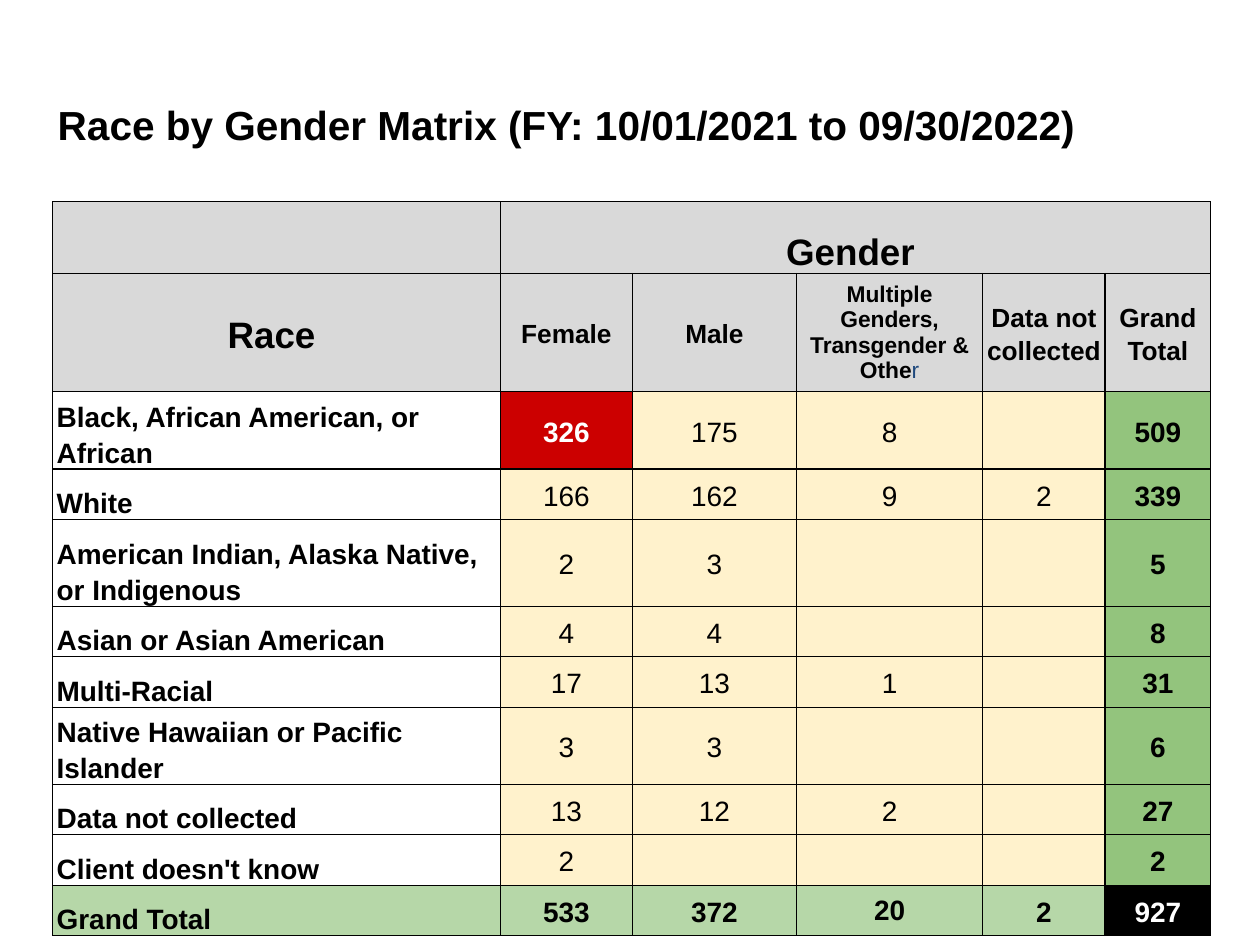
from lxml import etree
from pptx import Presentation
from pptx.dml.color import RGBColor
from pptx.enum.text import MSO_ANCHOR as Anchor, PP_ALIGN as Align
from pptx.oxml.ns import qn
from pptx.util import Inches, Pt

COLUMN_WIDTHS = [3.55, 1.05, 1.3, 1.48, 0.97, 0.84]
ROW_HEIGHTS = [0.57, 0.94, 0.57, 0.4, 0.69, 0.4, 0.4, 0.57, 0.4, 0.4, 0.4]
ROWS = [
    ["", "Gender ", "", "", "", ""],
    ["Race ", "Female", "Male", "Multiple Genders, Transgender & Othe",
     "Data not collected", "Grand Total"],
    ["Black, African American, or African", "326", "175", "8", "", "509"],
    ["White", "166", "162", "9", "2", "339"],
    ["American Indian, Alaska Native, or Indigenous", "2", "3", "", "", "5"],
    ["Asian or Asian American", "4", "4", "", "", "8"],
    ["Multi-Racial", "17", "13", "1", "", "31"],
    ["Native Hawaiian or Pacific Islander", "3", "3", "", "", "6"],
    ["Data not collected", "13", "12", "2", "", "27"],
    ["Client doesn't know", "2", "", "", "", "2"],
    ["Grand Total", "533", "372", "20", "2", "927"],
]
LAST_ROW, LAST_COLUMN = len(ROWS) - 1, len(COLUMN_WIDTHS) - 1
HIGHLIGHT, OVERALL = (2, 1), (LAST_ROW, LAST_COLUMN)
GENDER_MIX, MIX_TOTAL = (1, 3), (LAST_ROW, 3)


def color(value):
    return RGBColor.from_string(value)


def format_run(span, size, bold=True, tint="000000"):
    span.font.name = "Arial"
    span.font.size = Pt(size)
    span.font.bold = bold
    span.font.color.rgb = color(tint)


def add_borders(cell):
    properties = cell._tc.get_or_add_tcPr()
    for side in ("lnL", "lnR", "lnT", "lnB"):
        line = etree.SubElement(properties, qn(f"a:{side}"), w=str(Pt(0.75)))
        fill = etree.SubElement(line, qn("a:solidFill"))
        etree.SubElement(fill, qn("a:srgbClr"), val="000000")


def cell_fill(row, column):
    if (row, column) == HIGHLIGHT:
        return "CC0000"
    if (row, column) == OVERALL:
        return "000000"
    if row < 2:
        return "D9D9D9"
    if row == LAST_ROW:
        return "B6D7A8"
    if column == LAST_COLUMN:
        return "93C47D"
    return "FFF2CC" if column else "FFFFFF"


def cell_size(row, column):
    if row == 0 or (row, column) == (1, 0):
        return 21
    if (row, column) == GENDER_MIX:
        return 13
    return 15 if row == 1 else 16


def format_cell(cell, row, column):
    place = (row, column)
    is_label = row > 1 and column == 0
    cell.margin_left = cell.margin_right = Inches(0.03)
    cell.margin_top = cell.margin_bottom = 0
    cell.vertical_anchor = Anchor.BOTTOM if is_label or row == 0 else Anchor.MIDDLE
    add_borders(cell)
    cell.fill.solid()
    cell.fill.fore_color.rgb = color(cell_fill(row, column))
    text = ROWS[row][column]
    if not text:
        return
    cell.text_frame.text = text
    para = cell.text_frame.paragraphs[0]
    para.alignment = Align.LEFT if is_label else Align.CENTER
    para.line_spacing = 1.0 if place in (GENDER_MIX, MIX_TOTAL) else 1.15
    is_plain = 2 <= row < LAST_ROW and 0 < column < LAST_COLUMN and place != HIGHLIGHT
    tint = "FFFFFF" if place in (HIGHLIGHT, OVERALL) else "000000"
    format_run(para.runs[0], cell_size(row, column), not is_plain, tint)
    if place == GENDER_MIX:
        span = para.add_run()
        span.text = "r"
        format_run(span, 13, False, "1F497D")


def add_title(page, left, top, width, height):
    box = page.shapes.add_textbox(left, top, width, height)
    frame = box.text_frame
    frame.word_wrap = True
    frame.vertical_anchor = Anchor.MIDDLE
    frame.margin_left = frame.margin_right = Inches(0.1)
    frame.margin_top = frame.margin_bottom = Inches(0.1)
    frame.text = "Race by Gender Matrix (FY: 10/01/2021 to 09/30/2022)"
    format_run(frame.paragraphs[0].runs[0], 23.2)


def add_matrix(page, left, top, width, height):
    table = page.shapes.add_table(
        len(ROWS), len(COLUMN_WIDTHS), left, top, width, height).table
    table.first_row = table.horz_banding = False
    for column, size in zip(table.columns, COLUMN_WIDTHS):
        column.width = Inches(size)
    for row, size in zip(table.rows, ROW_HEIGHTS):
        row.height = Inches(size)
    table.cell(0, 1).merge(table.cell(0, LAST_COLUMN))
    for row in range(len(ROWS)):
        for column in range(len(COLUMN_WIDTHS)):
            format_cell(table.cell(row, column), row, column)


def main():
    deck = Presentation()
    deck.slide_width, deck.slide_height = Inches(10), Inches(7.5)
    page = deck.slides.add_slide(deck.slide_layouts[6])
    add_title(page, Inches(0.36), Inches(0.43), Inches(9.32), Inches(1.11))
    add_matrix(page, Inches(0.42), Inches(1.6),
               Inches(sum(COLUMN_WIDTHS)), Inches(sum(ROW_HEIGHTS)))
    deck.save("out.pptx")


if __name__ == "__main__":
    main()
